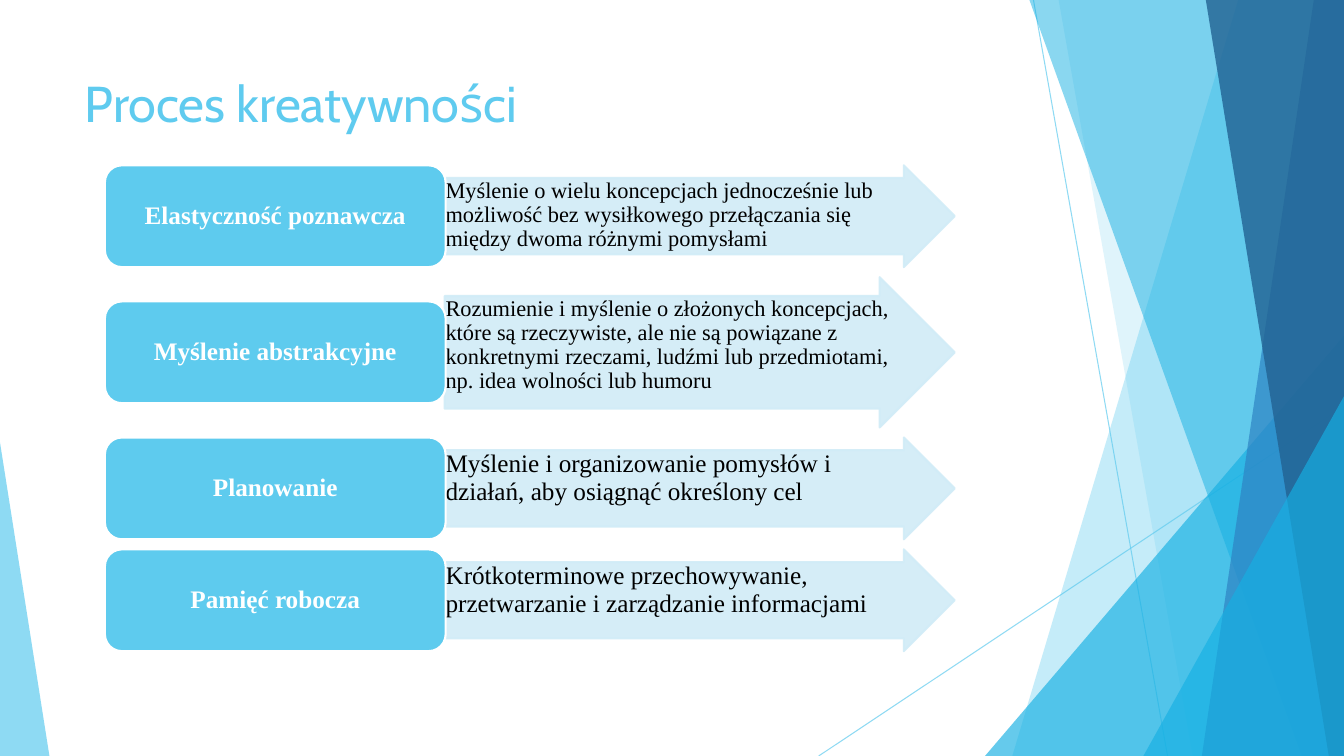
from lxml.etree import SubElement
from pptx import Presentation
from pptx.dml.color import RGBColor
from pptx.enum.shapes import MSO_CONNECTOR, MSO_SHAPE
from pptx.enum.text import MSO_ANCHOR, MSO_AUTO_SIZE, PP_ALIGN
from pptx.oxml.ns import qn
from pptx.util import Inches, Pt

WIDTH, HEIGHT = 13.33, 7.5
SKY, CYAN, BLUE, NAVY = "5FCBEF", "16B0E3", "2E83C3", "226292"
BOX, ARROW, WHITE, BLACK = "5ECBEE", "D1ECF7", "FFFFFF", "000000"

LINES = [(10.25, 0, 11.58, HEIGHT), (WIDTH, 4.03, 8.12, HEIGHT)]
RIBBONS = [
    (12.28, 10.04, SKY, 36),
    (10.5, 11.83, SKY, 20),
    (10.21, 12.91, CYAN, 50),
    (13.03, 11.92, BLUE, 70),
    (11.96, 13.18, NAVY, 80),
]
TRIANGLES = {
    "low": (9.77, 3.33, 3.56, 1, CYAN, 66),
    "front": (11.34, 3.93, 1.99, 1, CYAN, 66),
    "left": (0, 4.39, 0.49, 0, SKY, 70),
}
STAGES = [
    ("Elastyczność poznawcza",
     "Myślenie o wielu koncepcjach jednocześnie lub możliwość bez wysiłkowego "
     "przełączania się między dwoma różnymi pomysłami", 16, 1.01),
    ("Myślenie abstrakcyjne",
     "Rozumienie i myślenie o złożonych koncepcjach, które są rzeczywiste, ale nie są "
     "powiązane z konkretnymi rzeczami, ludźmi lub przedmiotami, np. idea wolności lub humoru",
     16, 1.49),
    ("Planowanie",
     "Myślenie i organizowanie pomysłów i działań, aby osiągnąć określony cel", 18, 1.01),
    ("Pamięć robocza",
     "Krótkoterminowe przechowywanie, przetwarzanie i zarządzanie informacjami", 18, 1.01),
]
STAGE_TOP, STAGE_GAP, BOX_HEIGHT = 1.64, 0.1, 1.01


def paint(color_format, color, opacity=100):
    color_format.rgb = RGBColor.from_string(color)
    if opacity < 100:
        node = color_format._xFill.find(qn("a:srgbClr"))
        SubElement(node, qn("a:alpha"), val=str(opacity * 1000))


def write(shape, text, size=18, color=BLACK, font="Times New Roman", bold=False,
          align=PP_ALIGN.LEFT, anchor=MSO_ANCHOR.TOP, margins=(0.01, 0.01), spacing=0.9):
    frame = shape.text_frame
    frame.word_wrap = True
    frame.auto_size = MSO_AUTO_SIZE.NONE
    frame.vertical_anchor = anchor
    frame.margin_left = frame.margin_right = Inches(margins[0])
    frame.margin_top = frame.margin_bottom = Inches(margins[1])
    paragraph = frame.paragraphs[0]
    paragraph.alignment = align
    paragraph.line_spacing = spacing
    run = paragraph.add_run()
    run.text = text
    run.font.name, run.font.size, run.font.bold = font, Pt(size), bold
    paint_font(run.font, color)


def paint_font(font, color):
    font.fill.solid()
    paint(font.fill.fore_color, color)


class SlideBuilder:
    def __init__(self, presentation):
        self.slide = presentation.slides.add_slide(presentation.slide_layouts[5])
        self.shapes = self.slide.shapes

    def style(self, shape, fill, opacity=100, line=None):
        shape.shadow.inherit = False
        shape.fill.solid()
        paint_solid(shape.fill, fill, opacity)
        if line:
            shape.line.width = Pt(1.5)
            shape.line.fill.solid()
            paint_solid(shape.line.fill, line, opacity)
        else:
            shape.line.fill.background()
        return shape

    def title(self, text):
        title = self.shapes.title
        title.left, title.top, title.width, title.height = map(Inches, (0.74, 0.67, 9.4, 1.44))
        write(title, text, size=36, color=SKY, font="Cabin", margins=(0.1, 0.05), spacing=1)

    def line(self, *ends):
        connector = self.shapes.add_connector(MSO_CONNECTOR.STRAIGHT, *map(Inches, ends))
        connector.line.width = Pt(0.75)
        connector.line.fill.solid()
        paint_solid(connector.line.fill, SKY, 70)
        SubElement(connector._element.spPr, qn("a:effectLst"))

    def ribbon(self, top_x, bottom_x, color, opacity):
        builder = self.shapes.build_freeform(Inches(top_x), 0)
        corners = [(WIDTH, 0), (WIDTH, HEIGHT), (bottom_x, HEIGHT)]
        builder.add_line_segments([(Inches(x), Inches(y)) for x, y in corners], close=True)
        self.style(builder.convert_to_shape(), color, opacity)

    def preset(self, kind, left, top, width, height, adjustments, fill, opacity=100, line=None):
        shape = self.shapes.add_shape(kind, *map(Inches, (left, top, width, height)))
        for index, value in enumerate(adjustments):
            shape.adjustments[index] = value
        return self.style(shape, fill, opacity, line)

    def triangle(self, left, top, width, apex, color, opacity):
        self.preset(MSO_SHAPE.ISOSCELES_TRIANGLE, left, top, width, HEIGHT - top,
                    [apex], color, opacity)

    def stage(self, top, name, description, size, height):
        arrow = self.preset(MSO_SHAPE.RIGHT_ARROW, 4.41, top, 5.06, height,
                            [0.75, 0.5], ARROW, 90, ARROW)
        write(arrow, description, size=size)
        box_top = top + (height - BOX_HEIGHT) / 2
        box = self.preset(MSO_SHAPE.ROUNDED_RECTANGLE, 1.04, box_top, 3.38, BOX_HEIGHT,
                          [0.167], BOX, line=WHITE)
        write(box, name, color=WHITE, bold=True, align=PP_ALIGN.CENTER,
              anchor=MSO_ANCHOR.MIDDLE, margins=(0.07, 0.04))


def paint_solid(fill, color, opacity):
    paint(fill.fore_color, color, opacity)


def main():
    presentation = Presentation()
    presentation.slide_width, presentation.slide_height = Inches(WIDTH), Inches(HEIGHT)
    builder = SlideBuilder(presentation)

    for ends in LINES:
        builder.line(*ends)
    for ribbon in RIBBONS[:2]:
        builder.ribbon(*ribbon)
    builder.triangle(*TRIANGLES["low"])
    for ribbon in RIBBONS[2:]:
        builder.ribbon(*ribbon)
    builder.triangle(*TRIANGLES["front"])
    builder.triangle(*TRIANGLES["left"])

    builder.title("Proces kreatywności")
    top = STAGE_TOP
    for name, description, size, height in STAGES:
        builder.stage(top, name, description, size, height)
        top += height + STAGE_GAP

    presentation.save("out.pptx")


if __name__ == "__main__":
    main()
